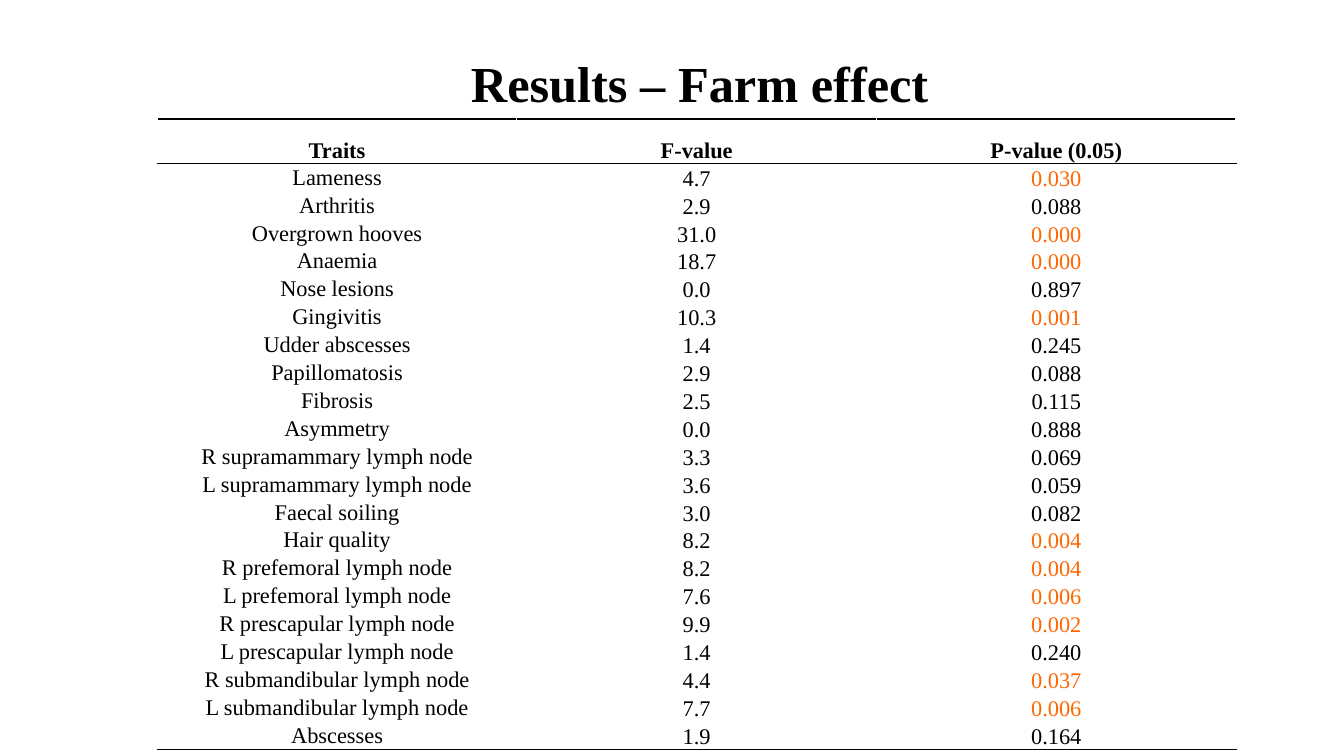
from dataclasses import dataclass
from typing import NamedTuple

from lxml.etree import SubElement
from pptx import Presentation
from pptx.dml.color import RGBColor
from pptx.enum.text import MSO_ANCHOR, MSO_AUTO_SIZE, PP_ALIGN
from pptx.oxml.ns import qn
from pptx.util import Inches, Pt


@dataclass(frozen=True)
class Theme:
    """Colours, typeface and type sizes of the slide."""
    font: str = "Times New Roman"
    ink: str = "000000"
    paper: str = "FFFFFF"
    significant: str = "FF6600"
    title_size: int = 36
    table_size: int = 16
    border_width: int = 1


class Trait(NamedTuple):
    """One trait with its test result."""
    name: str
    f_value: str
    p_value: str


THEME = Theme()
SIGNIFICANCE_LEVEL = 0.05
TABLE_LEFT, TABLE_TOP, TABLE_WIDTH, TABLE_HEIGHT = 1.56, 1.18, 10.7, 6.19
HEADER_HEIGHT = 0.44
HEADER = Trait("Traits", "F-value", "P-value (0.05)")
TRAITS = [
    Trait("Lameness", "4.7", "0.030"),
    Trait("Arthritis", "2.9", "0.088"),
    Trait("Overgrown hooves", "31.0", "0.000"),
    Trait("Anaemia", "18.7", "0.000"),
    Trait("Nose lesions", "0.0", "0.897"),
    Trait("Gingivitis", "10.3", "0.001"),
    Trait("Udder abscesses", "1.4", "0.245"),
    Trait("Papillomatosis", "2.9", "0.088"),
    Trait("Fibrosis", "2.5", "0.115"),
    Trait("Asymmetry", "0.0", "0.888"),
    Trait("R supramammary lymph node", "3.3", "0.069"),
    Trait("L supramammary lymph node", "3.6", "0.059"),
    Trait("Faecal soiling", "3.0", "0.082"),
    Trait("Hair quality", "8.2", "0.004"),
    Trait("R prefemoral lymph node", "8.2", "0.004"),
    Trait("L prefemoral lymph node", "7.6", "0.006"),
    Trait("R prescapular lymph node", "9.9", "0.002"),
    Trait("L prescapular lymph node", "1.4", "0.240"),
    Trait("R submandibular lymph node", "4.4", "0.037"),
    Trait("L submandibular lymph node", "7.7", "0.006"),
    Trait("Abscesses", "1.9", "0.164"),
]


def write_text(frame, text: str, size: int, bold: bool, color: str) -> None:
    """Write one centred paragraph into a text frame."""
    frame.text = text
    para = frame.paragraphs[0]
    para.alignment = PP_ALIGN.CENTER
    font = para.runs[0].font
    font.name = THEME.font
    font.size = Pt(size)
    font.bold = bold
    font.color.rgb = RGBColor.from_string(color)


def set_borders(cell, top: str, bottom: str) -> None:
    """Rule a cell in the given colours, with paper-coloured sides."""
    properties = cell._tc.get_or_add_tcPr()
    sides = {"lnL": THEME.paper, "lnR": THEME.paper, "lnT": top, "lnB": bottom}
    for side, color in sides.items():
        line = SubElement(properties, qn(f"a:{side}"), w=str(Pt(THEME.border_width)))
        fill = SubElement(line, qn("a:solidFill"))
        SubElement(fill, qn("a:srgbClr"), val=color)


def add_title(page) -> None:
    """Add the slide title."""
    box = page.shapes.add_textbox(Inches(3.89), Inches(0.47), Inches(6.1), Inches(0.71))
    frame = box.text_frame
    frame.word_wrap = True
    frame.auto_size = MSO_AUTO_SIZE.SHAPE_TO_FIT_TEXT
    write_text(frame, "Results – Farm effect", THEME.title_size, True, THEME.ink)


def fill_row(table, index: int, trait: Trait) -> None:
    """Fill and style one table row."""
    is_header = index == 0
    is_last = index == len(TRAITS)
    top = THEME.ink if index <= 1 else THEME.paper
    bottom = THEME.ink if is_header or is_last else THEME.paper
    is_significant = not is_header and float(trait.p_value) < SIGNIFICANCE_LEVEL
    for column, text in enumerate(trait):
        cell = table.cell(index, column)
        cell.margin_left = cell.margin_right = cell.margin_top = Inches(0.01)
        cell.margin_bottom = Inches(0)
        is_name = column == 0 and not is_header
        cell.vertical_anchor = MSO_ANCHOR.MIDDLE if is_name else MSO_ANCHOR.BOTTOM
        set_borders(cell, top, bottom)
        cell.fill.solid()
        cell.fill.fore_color.rgb = RGBColor.from_string(THEME.paper)
        color = THEME.significant if is_significant and column == 2 else THEME.ink
        write_text(cell.text_frame, text, THEME.table_size, is_header, color)


def add_results_table(page) -> None:
    """Add the table of F-values and P-values."""
    rows = [HEADER, *TRAITS]
    frame = page.shapes.add_table(
        len(rows), len(HEADER), Inches(TABLE_LEFT), Inches(TABLE_TOP),
        Inches(TABLE_WIDTH), Inches(TABLE_HEIGHT))
    table = frame.table
    table.first_row = table.horz_banding = False
    row_height = (TABLE_HEIGHT - HEADER_HEIGHT) / len(TRAITS)
    for index, trait in enumerate(rows):
        table.rows[index].height = Inches(row_height if index else HEADER_HEIGHT)
        fill_row(table, index, trait)


def main() -> None:
    """Build and save the deck."""
    deck = Presentation()
    deck.slide_width, deck.slide_height = Inches(13.33), Inches(7.5)
    page = deck.slides.add_slide(deck.slide_layouts[6])
    add_title(page)
    add_results_table(page)
    deck.save("out.pptx")


if __name__ == "__main__":
    main()
